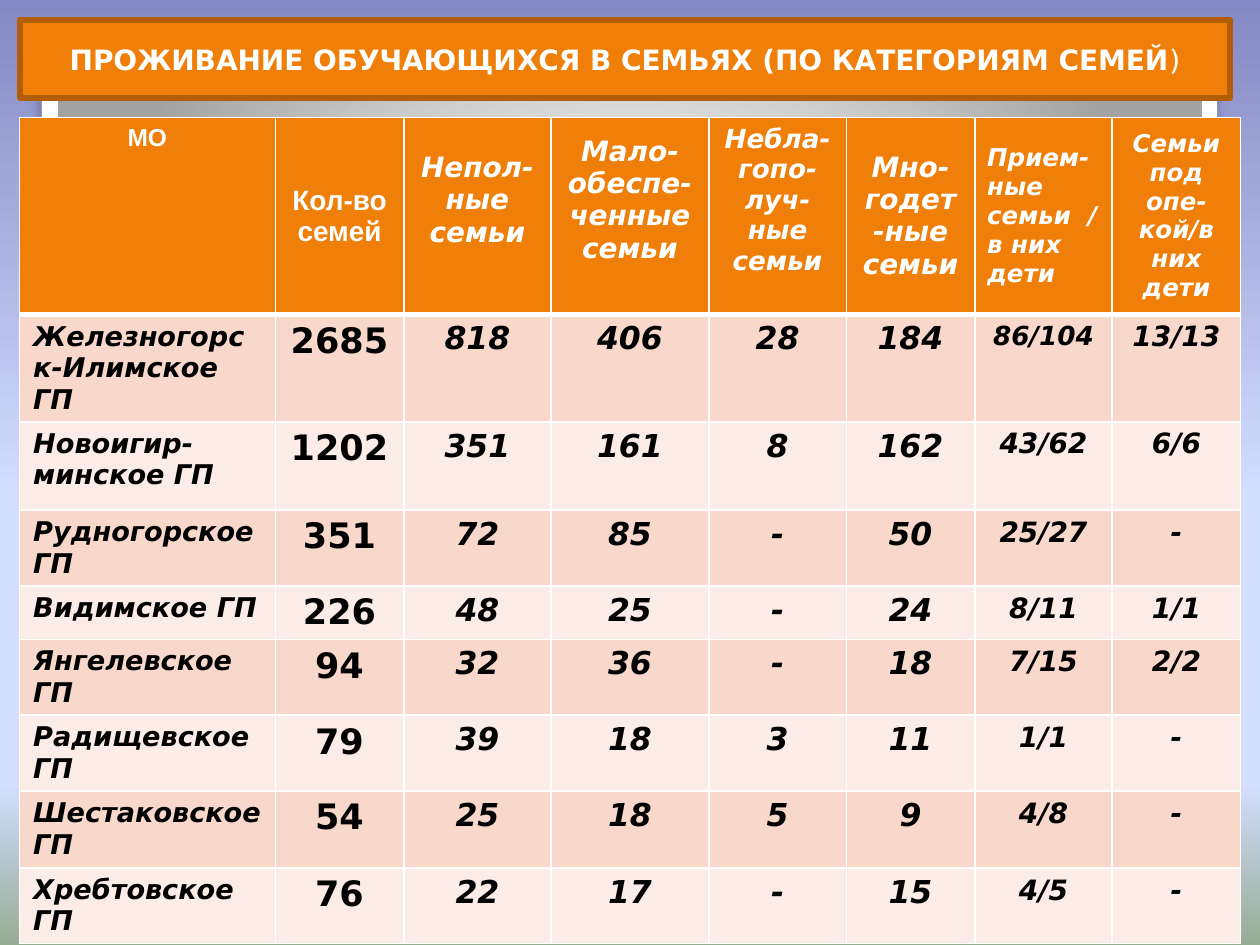
import pptx
import pptx.dml.color
import pptx.enum.shapes
import pptx.enum.text
import pptx.oxml
import pptx.oxml.ns
import pptx.util
from lxml import etree

Cm = pptx.util.Cm
Pt = pptx.util.Pt
qn = pptx.oxml.ns.qn
PP_ALIGN = pptx.enum.text.PP_ALIGN
ANCHOR = pptx.enum.text.MSO_ANCHOR
SHAPE = pptx.enum.shapes.MSO_SHAPE

COLORS = {
    "orange": "F07F09", "orange_dark": "B25E07", "white": "FFFFFF",
    "black": "000000", "band_dark": "F9D8CC", "band_light": "FCECE7",
    "card_line": "A4A4A4",
}
SKY = [(0, "8488C4"), (53, "D4DEFF"), (83, "D4DEFF"), (100, "96AB94")]
CARD = [(0, "FFFFFF"), (98, "FFFFFF"), (99, "F7F7F7"), (100, "DADADA")]
PANEL = [(0, "FFFFFF"), (55, "E1E1E1"), (100, "A2A2A2")]

COLUMN_WIDTHS = [5.16, 2.59, 2.97, 3.18, 2.77, 2.59, 2.77, 2.59]
ROW_HEIGHTS = [3.97, 2.16, 1.78, 0.91, 1.02, 1.5, 1.32, 1.55, 1.47]
SIDE_MARGINS = [0.28, 0.25, 0.25, 0.25, 0.25, 0.28, 0.25, 0.25]
RAISED_HEADERS = (2, 3, 4)
HEADERS = [
    ("МО", 14), ("Кол-во семей", 16), ("Непол-ные семьи", 16),
    ("Мало-обеспе-ченные семьи", 16), ("Небла-гопо-луч-ные семьи", 15),
    ("Мно-годет-ные семьи", 16), ("Прием-ные семьи  / в них дети", 14),
    ("Семьи под опе-кой/в них дети", 14),
]
BODY_SIZES = [15.5, 20, 18, 18, 18, 18, 16, 16]
SETTLEMENTS = [
    ["Железногорск-Илимское ГП", "2685", "818", "406", "28", "184", "86/104", "13/13"],
    ["Новоигир-минское ГП", "1202", "351", "161", "8", "162", "43/62", "6/6"],
    ["Рудногорское ГП", "351", "72", "85", "-", "50", "25/27", "-"],
    ["Видимское ГП", "226", "48", "25", "-", "24", "8/11", "1/1"],
    ["Янгелевское ГП", "94", "32", "36", "-", "18", "7/15", "2/2"],
    ["Радищевское ГП", "79", "39", "18", "3", "11", "1/1", "-"],
    ["Шестаковское ГП", "54", "25", "18", "5", "9", "4/8", "-"],
    ["Хребтовское ГП", "76", "22", "17", "-", "15", "4/5", "-"],
]


def rgb(name):
    return pptx.dml.color.RGBColor.from_string(COLORS[name])


def add_node(parent, tag, **attributes):
    return etree.SubElement(parent, qn(tag), {k: str(v) for k, v in attributes.items()})


class SlideBuilder:
    font = "DejaVu Sans"
    header_font = "Arial"

    def __init__(self, slide):
        self.slide = slide

    def gradient(self, owner, fill, stops, radial=False):
        fill.gradient()
        gradient = next(owner.iter(qn("a:gradFill")))
        for child in list(gradient):
            gradient.remove(child)
        stop_list = add_node(gradient, "a:gsLst")
        for position, color in stops:
            stop = add_node(stop_list, "a:gs", pos=position * 1000)
            add_node(stop, "a:srgbClr", val=color)
        if radial:
            circle = add_node(gradient, "a:path", path="circle")
            add_node(circle, "a:fillToRect", l=50000, t=175000, r=50000, b=-75000)
        else:
            add_node(gradient, "a:lin", ang=5400000, scaled=0)

    def background(self, stops):
        self.gradient(self.slide.element, self.slide.background.fill, stops)

    def shape(self, kind, box):
        shape = self.slide.shapes.add_shape(kind, *map(Cm, box))
        shape.shadow.inherit = False
        return shape

    def panel(self, box, radius, stops, radial=False):
        panel = self.shape(SHAPE.ROUNDED_RECTANGLE, box)
        panel.adjustments[0] = radius
        self.gradient(panel.element, panel.fill, stops, radial)
        panel.line.fill.background()
        return panel

    def card(self, box, radius, stops):
        card = self.panel(box, radius, stops)
        card.line.color.rgb = rgb("card_line")
        card.line.width = Pt(0.16)
        effects = next(card.element.iter(qn("a:effectLst")))
        shadow = add_node(effects, "a:outerShdw", blurRad=Pt(6), dist=Pt(4),
                          dir=5400000, rotWithShape=0)
        add_node(add_node(shadow, "a:srgbClr", val=COLORS["black"]), "a:alpha", val=25000)

    def run(self, paragraph, text, size, color, font=font, bold=True, italic=False):
        run = paragraph.add_run()
        run.text = text
        run.font.size = Pt(size)
        run.font.name = font
        run.font.bold = bold
        run.font.italic = italic
        run.font.color.rgb = rgb(color)

    def banner(self, box, parts, size):
        banner = self.shape(SHAPE.RECTANGLE, box)
        banner.fill.solid()
        banner.fill.fore_color.rgb = rgb("orange")
        banner.line.color.rgb = rgb("orange_dark")
        banner.line.width = Pt(3.35)
        banner.text_frame.word_wrap = True
        banner.text_frame.vertical_anchor = ANCHOR.MIDDLE
        paragraph = banner.text_frame.paragraphs[0]
        paragraph.alignment = PP_ALIGN.CENTER
        for text, bold in parts:
            self.run(paragraph, text, size, "white", bold=bold)

    def borders(self, cell, top, bottom):
        properties = cell._tc.get_or_add_tcPr()
        widths = {"a:lnL": 1, "a:lnR": 1, "a:lnT": top, "a:lnB": bottom}
        for index, (tag, width) in enumerate(widths.items()):
            line = add_node(properties, tag, w=Pt(width))
            add_node(add_node(line, "a:solidFill"), "a:srgbClr", val=COLORS["white"])
            properties.insert(index, line)

    def cell(self, cell, text, fill, align, anchor, side, below=0.13, top=1, bottom=1, **style):
        cell.fill.solid()
        cell.fill.fore_color.rgb = rgb(fill)
        cell.vertical_anchor = anchor
        cell.margin_left = cell.margin_right = Cm(side)
        cell.margin_bottom = Cm(below)
        self.borders(cell, top, bottom)
        paragraph = cell.text_frame.paragraphs[0]
        paragraph.alignment = align
        self.run(paragraph, text, **style)

    def table(self, left, top, headers, rows):
        table = self.slide.shapes.add_table(
            len(ROW_HEIGHTS), len(COLUMN_WIDTHS), Cm(left), Cm(top),
            Cm(sum(COLUMN_WIDTHS)), Cm(sum(ROW_HEIGHTS))).table
        for column, width in zip(table.columns, COLUMN_WIDTHS):
            column.width = Cm(width)
        for row, height in zip(table.rows, ROW_HEIGHTS):
            row.height = Cm(height)
        for c, (text, size) in enumerate(headers):
            self.cell(table.cell(0, c), text, "orange",
                      PP_ALIGN.LEFT if c == 6 else PP_ALIGN.CENTER,
                      ANCHOR.MIDDLE if c else ANCHOR.TOP, SIDE_MARGINS[c],
                      below=0.77 if c in RAISED_HEADERS else 0.13, bottom=3,
                      size=size, color="white", italic=c > 1,
                      font=self.header_font if c < 2 else self.font)
        for r, values in enumerate(rows, 1):
            for c, text in enumerate(values):
                self.cell(table.cell(r, c), text,
                          "band_dark" if r % 2 else "band_light",
                          PP_ALIGN.CENTER if c else PP_ALIGN.LEFT, ANCHOR.TOP,
                          SIDE_MARGINS[c], top=3 if r == 1 else 1,
                          size=15 if (r, c) == (1, 6) else BODY_SIZES[c],
                          color="black", italic=c != 1)


def main():
    presentation = pptx.Presentation()
    presentation.slide_width = Cm(25.4)
    presentation.slide_height = Cm(19.05)
    builder = SlideBuilder(presentation.slides.add_slide(presentation.slide_layouts[6]))
    builder.background(SKY)
    builder.card((0.84, 0.91, 23.7, 17.22), 0.02, CARD)
    builder.panel((1.17, 1.19, 23.06, 8.64), 0.05, PANEL, radial=True)
    builder.table(0.39, 2.37, HEADERS, SETTLEMENTS)
    builder.banner((0.4, 0.41, 24.4, 1.57), [
        ("ПРОЖИВАНИЕ ОБУЧАЮЩИХСЯ В СЕМЬЯХ (ПО КАТЕГОРИЯМ СЕМЕЙ", True),
        (")", False)], 16)
    presentation.save("out.pptx")


if __name__ == "__main__":
    main()
